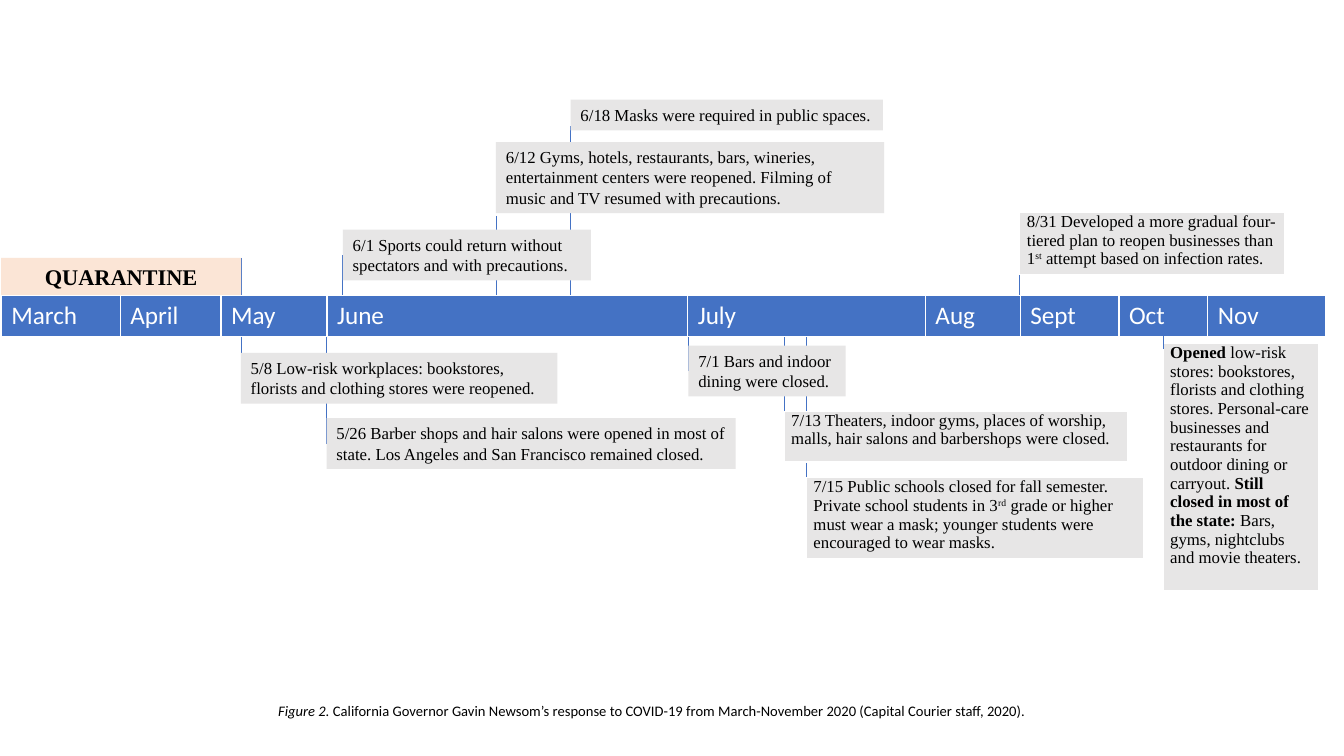
from lxml.etree import SubElement
from pptx import Presentation
from pptx.dml.color import RGBColor
from pptx.enum.shapes import MSO_CONNECTOR, MSO_SHAPE
from pptx.enum.text import MSO_ANCHOR, MSO_AUTO_SIZE, PP_ALIGN
from pptx.oxml.ns import qn
from pptx.util import Cm, Pt

BLUE = RGBColor(0x44, 0x72, 0xC4)
GRAY = RGBColor(0xE7, 0xE6, 0xE6)
PEACH = RGBColor(0xFB, 0xE5, 0xD6)
BLACK = RGBColor(0, 0, 0)
WHITE = RGBColor(0xFF, 0xFF, 0xFF)

SERIF = "Times New Roman"
SANS = "Calibri"
BOLD = {"bold": True}
RAISED = {"baseline": 30}

MONTHS = [
    ("March", 3.0), ("April", 2.54), ("May", 2.67), ("June", 9.09), ("July", 5.99),
    ("Aug", 2.39), ("Sept", 2.49), ("Oct", 2.24), ("Nov", 2.97),
]

# Date markers: x, top, bottom
MARKERS = [
    (6.07, 6.5, 9.53), (8.23, 7.72, 11.18), (8.64, 6.43, 8.28),
    (12.5, 5.44, 8.41), (14.38, 3.18, 7.54), (17.35, 7.67, 9.35),
    (19.76, 7.9, 11.0), (20.32, 8.28, 13.06), (25.7, 6.15, 7.54),
]
OCTOBER_MARKER = (29.31, 8.41, 8.79)

# Left, top, width, height, text
EVENT_BOXES = [
    (14.38, 2.51, 7.87, 0.78, "6/18 Masks were required in public spaces."),
    (8.23, 10.54, 10.31, 1.28,
     "5/26 Barber shops and hair salons were opened in most of state. "
     "Los Angeles and San Francisco remained closed."),
    (8.64, 5.79, 6.25, 1.28,
     "6/1 Sports could return without spectators and with precautions."),
    (12.5, 3.58, 9.78, 1.79,
     "6/12 Gyms, hotels, restaurants, bars, wineries, entertainment centers were "
     "reopened. Filming of music and TV resumed with precautions."),
    (17.35, 8.71, 3.96, 1.28, "7/1 Bars and indoor dining were closed."),
    (6.07, 8.89, 7.98, 1.28,
     "5/8 Low-risk workplaces: bookstores, florists and clothing stores were reopened."),
]

# Left, top, width, height, pieces of text with their format
EVENT_TABLES = [
    (25.7, 5.36, 6.68, 1.55, [
        ("8/31 Developed a more gradual four-tiered plan to reopen businesses than 1", {}),
        ("st", RAISED),
        (" attempt based on infection rates.", {})]),
    (19.76, 10.36, 8.66, 1.28, [
        ("7/13 Theaters, indoor gyms, places of worship, malls, hair salons and "
         "barbershops were closed.", {})]),
    (20.32, 12.04, 8.51, 2.03, [
        ("7/15 Public schools closed for fall semester. Private school students in 3", {}),
        ("rd", RAISED),
        (" grade or higher must wear a mask; younger students were encouraged to "
         "wear masks.", {})]),
    (29.31, 8.66, 3.91, 6.22, [
        ("Opened", BOLD),
        (" low-risk stores: bookstores, florists and clothing stores. Personal-care "
         "businesses and restaurants for outdoor dining or carryout. ", {}),
        ("Still closed in most of the state:", BOLD),
        (" Bars, gyms, nightclubs and movie theaters.", {})]),
]


def add_text(paragraph, text, font=SERIF, size=12, color=BLACK,
             bold=False, italic=False, baseline=0):
    """Append a run; baseline is the raise in percent."""
    run = paragraph.add_run()
    run.text = text
    run.font.name = font
    run.font.size = Pt(size)
    run.font.color.rgb = color
    run.font.bold = bold
    run.font.italic = italic
    if baseline:
        run.font._element.set("baseline", str(baseline * 1000))


def add_marker(slide, x, top, bottom):
    connector = slide.shapes.add_connector(
        MSO_CONNECTOR.STRAIGHT, Cm(x), Cm(top), Cm(x), Cm(bottom))
    connector.line.color.rgb = BLUE
    connector.line.width = Pt(0.5)
    SubElement(connector._element.spPr, qn("a:effectLst"))


def add_box(slide, left, top, width, height, text,
            fill=GRAY, alignment=PP_ALIGN.LEFT, **text_format):
    shape = slide.shapes.add_shape(
        MSO_SHAPE.RECTANGLE, Cm(left), Cm(top), Cm(width), Cm(height))
    shape.shadow.inherit = False
    shape.fill.solid()
    shape.fill.fore_color.rgb = fill
    shape.line.fill.background()
    frame = shape.text_frame
    frame.word_wrap = True
    frame.auto_size = MSO_AUTO_SIZE.SHAPE_TO_FIT_TEXT
    frame.vertical_anchor = MSO_ANCHOR.TOP
    frame.paragraphs[0].alignment = alignment
    add_text(frame.paragraphs[0], text, **text_format)


def add_row(slide, left, top, height, widths, fill):
    """Add a one-row table and return its cells."""
    table = slide.shapes.add_table(
        1, len(widths), Cm(left), Cm(top), Cm(sum(widths)), Cm(height)).table
    table.horz_banding = False
    for column, width in zip(table.columns, widths):
        column.width = Cm(width)
    cells = list(table.rows[0].cells)
    for cell in cells:
        cell.fill.solid()
        cell.fill.fore_color.rgb = fill
    return cells


def add_event_table(slide, left, top, width, height, pieces):
    cell = add_row(slide, left, top, height, [width], GRAY)[0]
    cell.margin_left = cell.margin_right = Cm(0.18)
    cell.margin_top = cell.margin_bottom = Cm(0)
    for text, text_format in pieces:
        add_text(cell.text_frame.paragraphs[0], text, **text_format)


def add_months(slide):
    widths = [width for _, width in MONTHS]
    cells = add_row(slide, 0.03, 7.44, 1.04, widths, BLUE)
    for cell, (month, _) in zip(cells, MONTHS):
        add_text(cell.text_frame.paragraphs[0], month, font=SANS, size=18, color=WHITE)


def add_caption(slide):
    frame = slide.shapes.add_textbox(
        Cm(6.76), Cm(17.48), Cm(22.81), Cm(0.76)).text_frame
    frame.word_wrap = True
    frame.auto_size = MSO_AUTO_SIZE.SHAPE_TO_FIT_TEXT
    caption_format = {"font": SANS, "size": 18, "baseline": 30}
    paragraph = frame.paragraphs[0]
    add_text(paragraph, "Figure 2. ", italic=True, **caption_format)
    add_text(paragraph,
             "California Governor Gavin Newsom’s response to COVID-19 from "
             "March-November 2020 (Capital Courier staff, 2020).", **caption_format)


def main():
    presentation = Presentation()
    presentation.slide_width = Cm(33.87)
    presentation.slide_height = Cm(19.05)
    slide = presentation.slides.add_slide(presentation.slide_layouts[6])
    for marker in MARKERS:
        add_marker(slide, *marker)
    for box in EVENT_BOXES:
        add_box(slide, *box)
    add_box(slide, 0.03, 6.5, 6.05, 0.94, "QUARANTINE", fill=PEACH,
            alignment=PP_ALIGN.CENTER, size=16, bold=True)
    add_months(slide)
    for event in EVENT_TABLES:
        add_event_table(slide, *event)
    add_marker(slide, *OCTOBER_MARKER)
    add_caption(slide)
    presentation.save("out.pptx")


if __name__ == "__main__":
    main()
